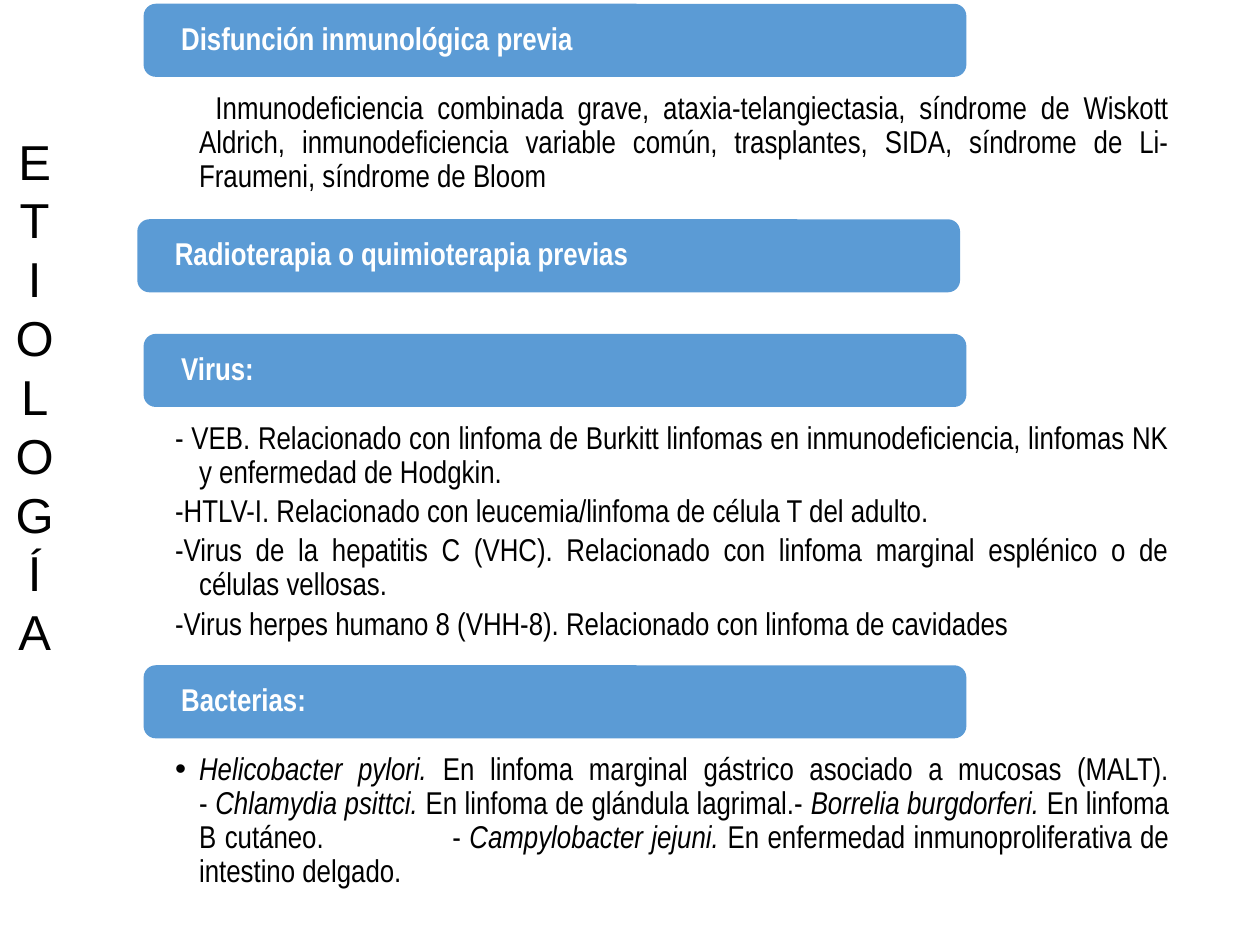
from dataclasses import dataclass

from lxml.etree import SubElement
from pptx import Presentation
from pptx.dml.color import RGBColor
from pptx.enum.shapes import MSO_SHAPE
from pptx.enum.text import MSO_ANCHOR, MSO_AUTO_SIZE, PP_ALIGN
from pptx.oxml.ns import qn
from pptx.util import Inches, Pt

BLUE = RGBColor(0x5B, 0x9B, 0xD5)
WHITE = RGBColor(0xFF, 0xFF, 0xFF)
BLACK = RGBColor(0x00, 0x00, 0x00)
BODY_FONT = "Arial Narrow"
BODY_LEFT, BODY_WIDTH = 0.67, 9.33
HEADING_WIDTH, HEADING_HEIGHT = 6.53, 0.58
HEADING_RISE = 0.29  # how far a heading stands above the top of its panel
HANGING = 0.19
LINE_BREAK = "\n"


@dataclass
class Item:
    runs: list[tuple[str, bool]]  # text, italic
    first_indent: float = -HANGING
    bullet: str = ""
    tab: float = 0


@dataclass
class Cause:
    heading: str
    items: list[Item]
    top: float
    height: float
    left: float = 1.14


CAUSES = [
    Cause("Disfunción inmunológica previa", [
        Item([("Inmunodeficiencia combinada grave, ataxia-telangiectasia, síndrome de "
               "Wiskott Aldrich, inmunodeficiencia variable común, trasplantes, SIDA, "
               "síndrome de Li-Fraumeni, síndrome de Bloom", False)], first_indent=0.13),
    ], 0.32, 1.33),
    Cause("Radioterapia o quimioterapia previas", [], 2.03, 0.5, left=1.09),
    Cause("Virus:", [
        Item([("- VEB. Relacionado con linfoma de Burkitt linfomas en inmunodeficiencia, "
               "linfomas NK y enfermedad de Hodgkin.", False)]),
        Item([("-HTLV-I. Relacionado con leucemia/linfoma de célula T del adulto.", False)]),
        Item([("-Virus de la hepatitis C (VHC). Relacionado con linfoma marginal esplénico "
               "o de células vellosas.", False)]),
        Item([("-Virus herpes humano 8 (VHH-8). Relacionado con linfoma de cavidades", False)]),
    ], 2.94, 2.23),
    Cause("Bacterias:", [
        Item([("Helicobacter pylori. ", True),
              ("En linfoma marginal gástrico asociado a mucosas (MALT).", False),
              (LINE_BREAK, False),
              ("- ", False),
              ("Chlamydia psittci. ", True),
              ("En linfoma de glándula lagrimal.- ", False),
              ("Borrelia burgdorferi. ", True),
              ("En linfoma B cutáneo.\t- ", False),
              ("Campylobacter jejuni. ", True),
              ("En enfermedad inmunoproliferativa de intestino delgado.", False)],
             bullet="•", tab=2.19),
    ], 5.57, 1.61),
]


def place(shape, left: float, top: float, width: float, height: float) -> None:
    shape.left, shape.top = Inches(left), Inches(top)
    shape.width, shape.height = Inches(width), Inches(height)


def set_insets(frame, left: float, top: float, right: float, bottom: float) -> None:
    frame.margin_left, frame.margin_top = Inches(left), Inches(top)
    frame.margin_right, frame.margin_bottom = Inches(right), Inches(bottom)


def set_font(paragraph, name: str, size: float, color: RGBColor, bold: bool = False) -> None:
    font = paragraph.font
    font.name, font.size, font.bold = name, Pt(size), bold
    font.color.rgb = color


def add_block(slide, kind, color: RGBColor, box: tuple):
    block = slide.shapes.add_shape(kind, *(Inches(length) for length in box))
    block.shadow.inherit = False
    block.fill.solid()
    block.fill.fore_color.rgb = color
    block.line.fill.background()
    return block


def write_item(paragraph, item: Item) -> None:
    paragraph.alignment = PP_ALIGN.JUSTIFY
    paragraph.line_spacing = 0.9
    paragraph.space_before, paragraph.space_after = Pt(0), Pt(3)
    # Indents, bullet and tab stop
    properties = paragraph._p.get_or_add_pPr()
    properties.set("marL", str(Inches(HANGING)))
    properties.set("indent", str(Inches(item.first_indent)))
    if item.bullet:
        SubElement(properties, qn("a:buFont"), typeface="Arial")
        SubElement(properties, qn("a:buChar"), char=item.bullet)
    else:
        SubElement(properties, qn("a:buNone"))
    if item.tab:
        stops = SubElement(properties, qn("a:tabLst"))
        SubElement(stops, qn("a:tab"), pos=str(Inches(item.tab)), algn="l")
    set_font(paragraph, BODY_FONT, 18, BLACK)
    for text, italic in item.runs:
        if text == LINE_BREAK:
            paragraph.add_line_break()
            continue
        run = paragraph.add_run()
        run.text = text
        run.font.italic = italic


def fill_panel(panel, cause: Cause) -> None:
    place(panel, BODY_LEFT, cause.top, BODY_WIDTH, cause.height)
    frame = panel.text_frame
    frame.auto_size = MSO_AUTO_SIZE.NONE
    frame.word_wrap = True
    frame.vertical_anchor = MSO_ANCHOR.TOP
    set_insets(frame, 0.72, 0.41, 0.72, 0.14)
    for number, item in enumerate(cause.items):
        write_item(frame.add_paragraph() if number else frame.paragraphs[0], item)


def add_heading(slide, cause: Cause) -> None:
    box = (cause.left, cause.top - HEADING_RISE, HEADING_WIDTH, HEADING_HEIGHT)
    heading = add_block(slide, MSO_SHAPE.ROUNDED_RECTANGLE, BLUE, box)
    frame = heading.text_frame
    frame.word_wrap = True
    frame.vertical_anchor = MSO_ANCHOR.MIDDLE
    set_insets(frame, 0.27, 0, 0.27, 0)
    paragraph = frame.paragraphs[0]
    paragraph.alignment = PP_ALIGN.JUSTIFY
    paragraph.line_spacing = 0.9
    set_font(paragraph, BODY_FONT, 18, WHITE, bold=True)
    paragraph.add_run().text = cause.heading


def write_vertical_title(title, word: str) -> None:
    place(title, 0.02, 0.99, 0.51, 4.34)
    frame = title.text_frame
    frame.auto_size = MSO_AUTO_SIZE.NONE
    frame.word_wrap = False
    frame.vertical_anchor = MSO_ANCHOR.TOP
    frame.text = "\n".join(word)
    for letter in frame.paragraphs:
        letter.alignment = PP_ALIGN.CENTER
        set_font(letter, "Arial", 28, BLACK)


def main() -> None:
    presentation = Presentation()
    presentation.slide_width, presentation.slide_height = Inches(10), Inches(7.5)
    # The comparison layout has a title and four text areas
    slide = presentation.slides.add_slide(presentation.slide_layouts[4])
    panels = [area for area in slide.placeholders if 1 <= area.placeholder_format.idx <= 4]

    write_vertical_title(slide.shapes.title, "ETIOLOGÍA")
    for cause, panel in zip(CAUSES, panels):
        if cause.items:
            fill_panel(panel, cause)
        else:
            panel.element.getparent().remove(panel.element)
        add_heading(slide, cause)

    presentation.save("out.pptx")


if __name__ == "__main__":
    main()
